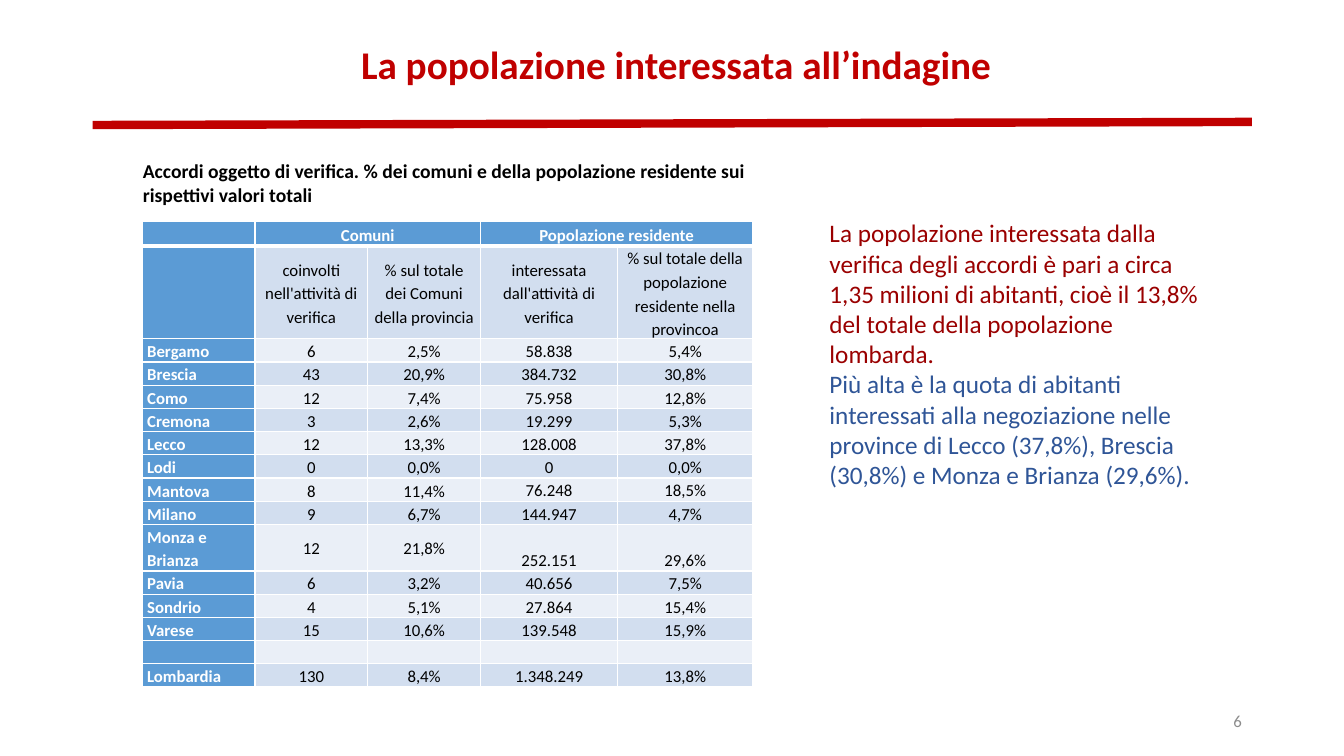
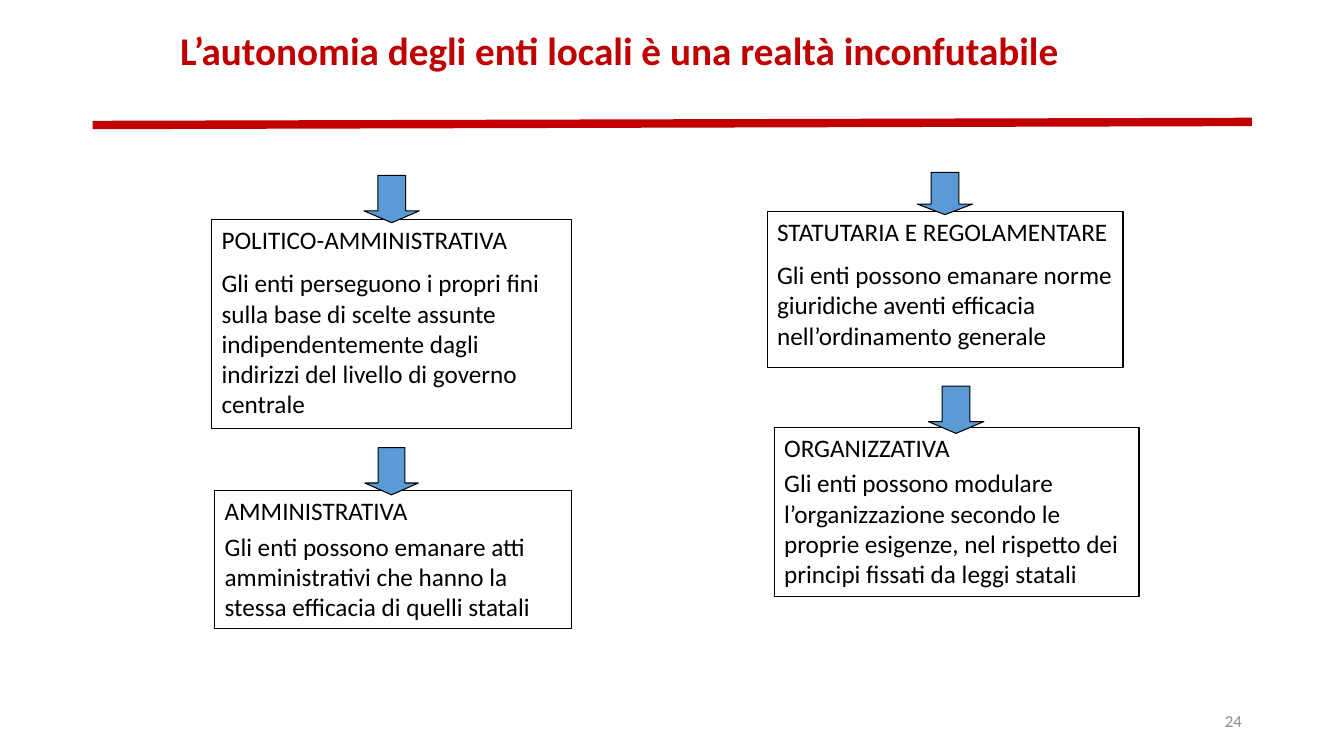
import pptx
import pptx.util
import pptx.dml.color
import pptx.enum.shapes
import pptx.enum.text
import pptx.oxml.ns
from lxml import etree

Pt = pptx.util.Pt
RGBColor = pptx.dml.color.RGBColor
PP_ALIGN = pptx.enum.text.PP_ALIGN
MSO_ANCHOR = pptx.enum.text.MSO_ANCHOR
MSO_SHAPE = pptx.enum.shapes.MSO_SHAPE
qn = pptx.oxml.ns.qn

FONT = "Calibri"
RED = RGBColor(0xC0, 0x00, 0x00)
DARK_RED = RGBColor(0x9A, 0x00, 0x00)
DARK_BLUE = RGBColor(0x2F, 0x55, 0x97)
BLUE = RGBColor(0x5B, 0x9B, 0xD5)
BAND = RGBColor(0xD2, 0xDE, 0xEF)
PALE = RGBColor(0xEA, 0xEF, 0xF7)
GRAY = RGBColor(0x8C, 0x8C, 0x8C)
BLACK = RGBColor(0x00, 0x00, 0x00)
WHITE = RGBColor(0xFF, 0xFF, 0xFF)

prs = pptx.Presentation()
prs.slide_width, prs.slide_height = Pt(960), Pt(540)


def add_run(p, text, size, color, bold=False):
    r = p.add_run()
    r.text = text
    r.font.name = FONT
    r.font.size = Pt(size)
    r.font.bold = bold
    r.font.color.rgb = color


def add_slide(title, number, left, top, width, height):
    s = prs.slides.add_slide(prs.slide_layouts[5])
    rule = s.shapes.add_connector(
        pptx.enum.shapes.MSO_CONNECTOR.STRAIGHT, Pt(66.2), Pt(89.3), Pt(894.2), Pt(87.1))
    rule.line.color.rgb = RED
    rule.line.width = Pt(6)
    etree.SubElement(rule.element.spPr, qn("a:effectLst"))

    sp = s.shapes.title
    sp.left, sp.top, sp.width, sp.height = Pt(left), Pt(top), Pt(width), Pt(height)
    tf = sp.text_frame
    tf.word_wrap = True
    tf.auto_size = pptx.enum.text.MSO_AUTO_SIZE.NONE
    tf.vertical_anchor = MSO_ANCHOR.MIDDLE
    p = tf.paragraphs[0]
    p.alignment = PP_ALIGN.CENTER
    add_run(p, title, 28, RED, True)

    tf = s.shapes.add_textbox(Pt(678.2), Pt(500.4), Pt(216), Pt(28.8)).text_frame
    tf.word_wrap = True
    tf.vertical_anchor = MSO_ANCHOR.MIDDLE
    p = tf.paragraphs[0]
    p.alignment = PP_ALIGN.RIGHT
    add_run(p, number, 12, GRAY)
    return s


s = add_slide("La popolazione interessata all’indagine", "6", 134, 8.6, 697.7, 77.8)
s.shapes.title.text_frame.paragraphs[0].line_spacing = 0.9

tf = s.shapes.add_textbox(Pt(95), Pt(110.2), Pt(453.6), Pt(41)).text_frame
tf.word_wrap = True
add_run(tf.paragraphs[0],
        "Accordi oggetto di verifica. % dei comuni e della popolazione residente "
        "sui rispettivi valori totali", 14, BLACK, True)

tf = s.shapes.add_textbox(Pt(585.4), Pt(151.9), Pt(293.8), Pt(225.4)).text_frame
tf.word_wrap = True
add_run(tf.paragraphs[0],
        "La popolazione interessata dalla verifica degli accordi è pari a circa "
        "1,35 milioni di abitanti, cioè il 13,8% del totale della popolazione lombarda.",
        18, DARK_RED)
add_run(tf.add_paragraph(),
        "Più alta è la quota di abitanti interessati alla negoziazione nelle province "
        "di Lecco (37,8%), Brescia (30,8%) e Monza e Brianza (29,6%).", 18, DARK_BLUE)

rows = [
    ("", "Comuni", "", "Popolazione residente", ""),
    ("", "coinvolti nell'attività di verifica", "% sul totale dei Comuni della provincia",
     "interessata dall'attività di verifica",
     "% sul totale della popolazione residente nella provincoa"),
    ("Bergamo", "6", "2,5%", "58.838", "5,4%"),
    ("Brescia", "43", "20,9%", "384.732", "30,8%"),
    ("Como", "12", "7,4%", "75.958", "12,8%"),
    ("Cremona", "3", "2,6%", "19.299", "5,3%"),
    ("Lecco", "12", "13,3%", "128.008", "37,8%"),
    ("Lodi", "0", "0,0%", "0", "0,0%"),
    ("Mantova", "8", "11,4%", "76.248", "18,5%"),
    ("Milano", "9", "6,7%", "144.947", "4,7%"),
    ("Monza e Brianza", "12", "21,8%", "252.151", "29,6%"),
    ("Pavia", "6", "3,2%", "40.656", "7,5%"),
    ("Sondrio", "4", "5,1%", "27.864", "15,4%"),
    ("Varese", "15", "10,6%", "139.548", "15,9%"),
    ("", "", "", "", ""),
    ("Lombardia", "130", "8,4%", "1.348.249", "13,8%"),
]
heights = {0: 17.3, 1: 66.2, 10: 33.2}
table = s.shapes.add_table(len(rows), 5, Pt(101.5), Pt(158.4), Pt(436.3), Pt(332)).table
table.first_row = table.horz_banding = False
for column, width in zip(table.columns, (80.6, 80.6, 80.6, 97.9, 96.6)):
    column.width = Pt(width)

for i, row in enumerate(rows):
    table.rows[i].height = Pt(heights.get(i, 16.6))
    for j, text in enumerate(row):
        cell = table.cell(i, j)
        heading = i == 0 or j == 0
        cell.margin_left = cell.margin_right = Pt(3.6)
        cell.margin_top = cell.margin_bottom = 0
        low = i > 1 and j > 2 or i == len(rows) - 1 and j != 2
        cell.vertical_anchor = MSO_ANCHOR.BOTTOM if low else MSO_ANCHOR.MIDDLE
        tcPr = cell._tc.get_or_add_tcPr()
        for side in ("lnL", "lnR", "lnT", "lnB"):
            thick = (i, side) in ((0, "lnB"), (1, "lnT"))
            ln = etree.SubElement(tcPr, qn("a:" + side), w=str(Pt(3 if thick else 1)))
            fill = etree.SubElement(ln, qn("a:solidFill"))
            etree.SubElement(fill, qn("a:srgbClr"), val=str(WHITE))
        cell.fill.solid()
        cell.fill.fore_color.rgb = BLUE if heading else BAND if i % 2 else PALE
        p = cell.text_frame.paragraphs[0]
        p.line_spacing = 1.15
        p.alignment = PP_ALIGN.CENTER if j else PP_ALIGN.LEFT
        if text:
            add_run(p, text, 12, WHITE if heading else BLACK, heading)
        else:
            etree.SubElement(p._p, qn("a:endParaRPr"), sz="1200")

for j in (1, 3):
    table.cell(0, j).merge(table.cell(0, j + 1))

s = add_slide("L’autonomia degli enti locali è una realtà inconfutabile", "24",
              67.7, 0, 739.4, 90)
tf = s.shapes.title.text_frame
tf.vertical_anchor = MSO_ANCHOR.TOP
tf.margin_left, tf.margin_top = Pt(17), Pt(18.8)

boxes = [
    ("STATUTARIA E REGOLAMENTARE",
     "Gli enti possono emanare norme giuridiche aventi efficacia nell’ordinamento generale",
     9, (548, 151.2, 254.2, 111.6), (655.2, 123.1, 39.6, 30.2)),
    ("POLITICO-AMMINISTRATIVA",
     "Gli enti perseguono i propri fini sulla base di scelte assunte indipendentemente "
     "dagli indirizzi del livello di governo centrale",
     9, (151.2, 157, 257, 149), (260, 125.3, 39.6, 33.8)),
    ("AMMINISTRATIVA",
     "Gli enti possono emanare atti amministrativi che hanno la stessa efficacia "
     "di quelli statali",
     3.6, (153.4, 350.6, 254.9, 98.6), (260.6, 319.7, 38.2, 33.8)),
    ("ORGANIZZATIVA",
     "Gli enti possono modulare l’organizzazione secondo le proprie esigenze, "
     "nel rispetto dei principi fissati da leggi statali",
     3.6, (553, 305.3, 260.6, 121), (663.1, 275.8, 39.6, 33.8)),
]
for heading, body, gap, box_area, arrow_area in boxes:
    group = s.shapes.add_group_shape()
    box = group.shapes.add_shape(MSO_SHAPE.RECTANGLE, *map(Pt, box_area))
    arrow = group.shapes.add_shape(MSO_SHAPE.DOWN_ARROW, *map(Pt, arrow_area))
    for sp in (box, arrow):
        sp.shadow.inherit = False
        sp.line.color.rgb = BLACK
        sp.line.width = Pt(0.75)
    box.fill.background()
    arrow.fill.solid()
    arrow.fill.fore_color.rgb = BLUE
    arrow.adjustments[1] = 0.25
    tf = box.text_frame
    tf.word_wrap = True
    tf.vertical_anchor = MSO_ANCHOR.TOP
    for p, text in ((tf.paragraphs[0], heading), (tf.add_paragraph(), body)):
        p.alignment = PP_ALIGN.LEFT
        add_run(p, text, 18, BLACK)
    p.space_before = Pt(gap)

prs.save("out.pptx")
